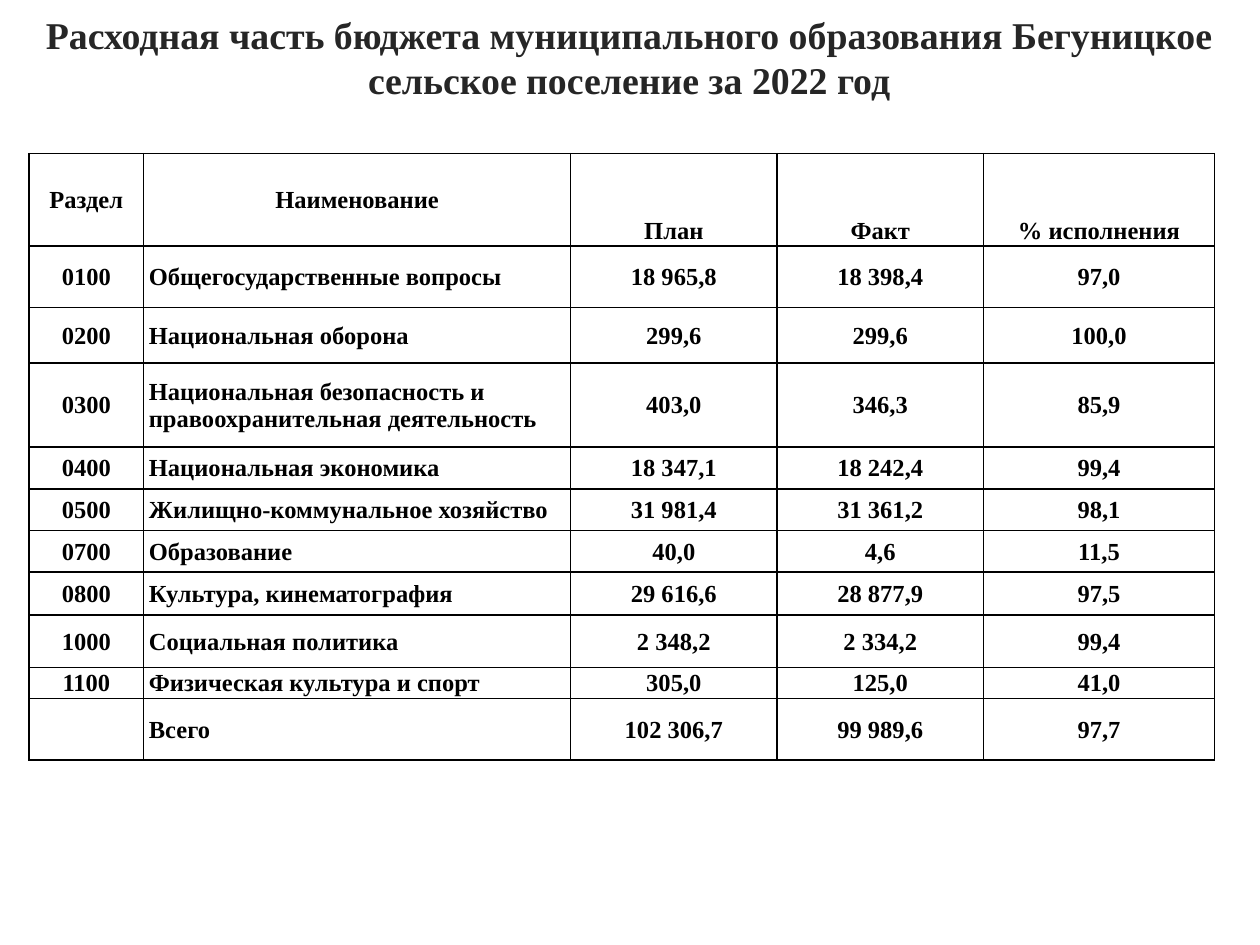
from dataclasses import dataclass

import pptx
import pptx.dml.color
import pptx.enum.text
import pptx.oxml
import pptx.oxml.ns
import pptx.util

Pt = pptx.util.Pt
ALIGN = pptx.enum.text.PP_ALIGN
ANCHOR = pptx.enum.text.MSO_ANCHOR


@dataclass(frozen=True)
class Theme:
    """Colours, font and type sizes of the slide."""
    font: str = "Times New Roman"
    title_size: float = 21.6
    table_size: float = 14
    title_color: str = "262626"
    ink: str = "000000"
    paper: str = "FFFFFF"
    rule_width: float = 1


THEME = Theme()
TITLE = ("Расходная часть бюджета муниципального образования Бегуницкое "
         "сельское поселение за 2022 год")
HEADINGS = ["Раздел", "Наименование", "План", "Факт", "% исполнения"]
EXPENSES = [
    ("0100", "Общегосударственные вопросы", "18 965,8", "18 398,4", "97,0"),
    ("0200", "Национальная оборона", "299,6", "299,6", "100,0"),
    ("0300", "Национальная безопасность и правоохранительная деятельность",
     "403,0", "346,3", "85,9"),
    ("0400", "Национальная экономика", "18 347,1", "18 242,4", "99,4"),
    ("0500", "Жилищно-коммунальное хозяйство", "31 981,4", "31 361,2", "98,1"),
    ("0700", "Образование", "40,0", "4,6", "11,5"),
    ("0800", "Культура, кинематография", "29 616,6", "28 877,9", "97,5"),
    ("1000", "Социальная политика", "2 348,2", "2 334,2", "99,4"),
    ("1100", "Физическая культура и спорт", "305,0", "125,0", "41,0"),
    ("", "Всего", "102 306,7", "99 989,6", "97,7"),
]
COLUMN_WIDTHS = [65.5, 244, 118, 118, 132]
ROW_HEIGHTS = [35.2, 5.8, 35.2, 31.7, 48.2, 23.8, 23.8, 23.8, 24.5, 30.2, 17.3, 35.2]
MERGED_COLUMNS = 2
NAME_COLUMN = 1


def style_paragraph(paragraph, size, color, align):
    """Apply the bold theme font to a whole paragraph."""
    paragraph.alignment = align
    font = paragraph.font
    font.name, font.size, font.bold = THEME.font, Pt(size), True
    font.color.rgb = pptx.dml.color.RGBColor.from_string(color)


def rule_cell(cell, hidden_side):
    """Draw the cell borders, leaving the hidden side without a line."""
    properties = cell._tc.get_or_add_tcPr()
    for position, side in enumerate("LRTB"):
        paint = ("<a:noFill/>" if side == hidden_side else
                 f'<a:solidFill><a:srgbClr val="{THEME.ink}"/></a:solidFill>')
        properties.insert(position, pptx.oxml.parse_xml(
            f'<a:ln{side} {pptx.oxml.ns.nsdecls("a")} w="{Pt(THEME.rule_width)}">'
            f"{paint}</a:ln{side}>"))


def fill_cell(cell, text, is_name, hidden_side):
    """Set the wording, insets, fill and borders of one cell."""
    cell.text = text
    cell.vertical_anchor = ANCHOR.MIDDLE
    cell.margin_left = Pt(3 if is_name else 0.7)
    cell.margin_top = cell.margin_right = Pt(0.7)
    cell.margin_bottom = 0
    style_paragraph(cell.text_frame.paragraphs[0], THEME.table_size, THEME.ink,
                    ALIGN.LEFT if is_name else ALIGN.CENTER)
    cell.fill.solid()
    cell.fill.fore_color.rgb = pptx.dml.color.RGBColor.from_string(THEME.paper)
    rule_cell(cell, hidden_side)


def add_title(slide, left, top, width, height):
    """Place the centred heading at the bottom of its box."""
    frame = slide.shapes.add_textbox(Pt(left), Pt(top), Pt(width), Pt(height)).text_frame
    frame.word_wrap = True
    frame.vertical_anchor = ANCHOR.BOTTOM
    frame.text = TITLE
    style_paragraph(frame.paragraphs[0], THEME.title_size, THEME.title_color, ALIGN.CENTER)


def add_expense_table(slide, left, top, width, height):
    """Place the budget table with its two-row header."""
    upper = HEADINGS[:MERGED_COLUMNS] + [""] * (len(HEADINGS) - MERGED_COLUMNS)
    lower = [""] * MERGED_COLUMNS + HEADINGS[MERGED_COLUMNS:]
    rows = [upper, lower, *EXPENSES]
    graphic = slide.shapes.add_table(len(rows), len(HEADINGS),
                                     Pt(left), Pt(top), Pt(width), Pt(height))
    table = graphic.table
    table.first_row = table.horz_banding = False
    for column, column_width in zip(table.columns, COLUMN_WIDTHS):
        column.width = Pt(column_width)
    for row, row_height in zip(table.rows, ROW_HEIGHTS):
        row.height = Pt(row_height)
    graphic.height = Pt(height)
    for row, values in enumerate(rows):
        hidden_side = {0: "B", 1: "T"}.get(row)
        for column, text in enumerate(values):
            fill_cell(table.cell(row, column), text,
                      column == NAME_COLUMN and row > 1,
                      hidden_side if column >= MERGED_COLUMNS else None)
    for column in range(MERGED_COLUMNS):
        table.cell(0, column).merge(table.cell(1, column))


def main():
    """Build and save the budget slide."""
    deck = pptx.Presentation()
    deck.slide_width, deck.slide_height = Pt(720), Pt(540)
    slide = deck.slides.add_slide(deck.slide_layouts[6])
    add_title(slide, 16.6, 0, 686, 62)
    add_expense_table(slide, 16.6, 87.8, sum(COLUMN_WIDTHS), 348)
    deck.save("out.pptx")


if __name__ == "__main__":
    main()
